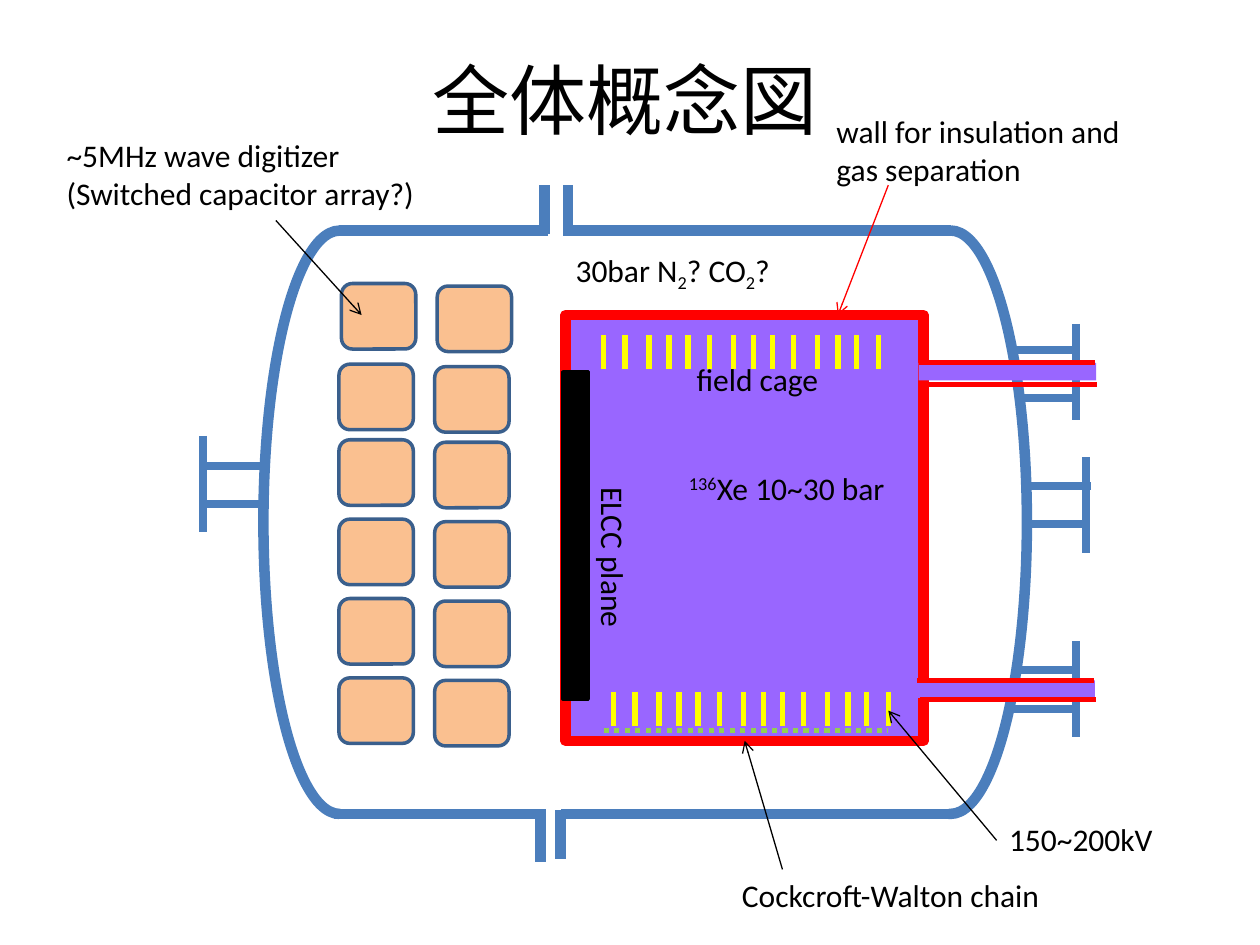
from lxml import etree
from pptx import Presentation
from pptx import util as u
from pptx.dml.color import RGBColor
from pptx.enum import dml, shapes, text
from pptx.oxml import ns

COLORS = {
    "steel": "4B7EBC", "gas": "9966FF", "wall": "FF0000", "black": "000000",
    "board": "FAC090", "board_edge": "3A5F8C", "ring": "FFFF00", "chain": "92D050",
}
SHAPE = shapes.MSO_SHAPE


def color(name):
    return RGBColor.from_string(COLORS[name])


def inches(*values):
    return [u.Inches(value) for value in values]


def add_line(group, start, end, name, width, arrow=False, dash=None):
    line = group.add_connector(shapes.MSO_CONNECTOR.STRAIGHT, *inches(*start, *end))
    line.line.color.rgb = color(name)
    line.line.width = u.Pt(width)
    if dash:
        line.line.dash_style = dash
    if arrow:
        etree.SubElement(line.line._get_or_add_ln(), ns.qn("a:tailEnd"), type="arrow")
    etree.SubElement(line._element.spPr, ns.qn("a:effectLst"))
    return line


def add_block(group, kind, frame, fill=None, edge=None, width=2):
    block = group.add_shape(kind, *inches(*frame))
    block.shadow.inherit = False
    if fill:
        block.fill.solid()
        block.fill.fore_color.rgb = color(fill)
    else:
        block.fill.background()
    if edge:
        block.line.color.rgb = color(edge)
        block.line.width = u.Pt(width)
    else:
        block.line.fill.background()
    return block


def add_label(page, frame, *lines, rotation=0):
    box = page.shapes.add_textbox(*inches(*frame))
    box.rotation = rotation
    box.text_frame.word_wrap = True
    box.text_frame.auto_size = text.MSO_AUTO_SIZE.SHAPE_TO_FIT_TEXT
    for index, spans in enumerate(lines):
        para = box.text_frame.paragraphs[0] if index == 0 else box.text_frame.add_paragraph()
        para.font.name = "Calibri"
        para.font.size = u.Pt(18)
        para.font.color.rgb = color("black")
        for words, baseline in spans:
            span = para.add_run()
            span.text = words
            if baseline:
                span._r.get_or_add_rPr().set("baseline", str(baseline * 1000))


def add_title(page):
    title = page.shapes.title
    title.left, title.top, title.width, title.height = inches(0.46, 0.16, 9, 1.25)
    title.text_frame.text = "全体概念図"
    title.text_frame.vertical_anchor = text.MSO_ANCHOR.MIDDLE
    para = title.text_frame.paragraphs[0]
    para.alignment = text.PP_ALIGN.CENTER
    para.font.name = "Calibri"
    para.font.size = u.Pt(44)
    para.font.color.rgb = color("black")


def add_boards(page):
    for left, top in ((3.45, 2.27), (2.69, 2.25)):
        for row, drop in enumerate((0, 0.64, 1.24, 1.87, 2.5, 3.13)):
            shift = 0.02 if row == 0 else 0
            add_block(page.shapes, SHAPE.ROUNDED_RECTANGLE,
                      (left + shift, top + drop, 0.59, 0.52), "board", "board_edge")


def add_field_rings(page, left, top):
    steps = [0.67 * cycle + step for cycle in range(4) for step in (0, 0.16, 0.31, 0.48)]
    for step in steps[2:]:
        x = left + step - steps[2]
        add_line(page.shapes, (x, top), (x, top + 0.27), "ring", 3)


def add_tank_half(page, arc_left, rotation, lines):
    half = page.shapes.add_group_shape().shapes
    arc = add_block(half, SHAPE.ARC, (arc_left, 1.83, 1.21, 4.63), edge="steel", width=6)
    arc.adjustments[0] = 162
    arc.adjustments[1] = 54.25
    arc.rotation = rotation
    for start, end in lines:
        add_line(half, start, end, "steel", 6)


def add_nozzle(page, flange_x, flange_top, pipes):
    for start, end, y in pipes:
        add_line(page.shapes, (start, y), (end, y), "steel", 4.5)
    add_line(page.shapes, (flange_x, flange_top), (flange_x, flange_top + 0.76), "steel", 4.5)


def add_gas_pipe(page, left, top, gap):
    add_block(page.shapes, SHAPE.RECTANGLE, (left, top, 1.41, 0.14), "gas")
    for shift, y in ((0, top), (0.02, top + gap)):
        add_line(page.shapes, (left + shift, y), (left + shift + 1.4, y), "wall", 3)


def main():
    deck = Presentation()
    deck.slide_width, deck.slide_height = inches(10, 7.5)
    page = deck.slides.add_slide(deck.slide_layouts[5])
    add_title(page)

    chamber = add_block(page.shapes, SHAPE.RECTANGLE, (4.49, 2.5, 2.84, 3.38), "gas", "wall", 6)
    add_block(page.shapes, SHAPE.RECTANGLE, (4.47, 2.95, 0.2, 2.6), "black", "black")
    add_boards(page)
    add_field_rings(page, 4.87, 5.49)
    add_field_rings(page, 4.79, 2.66)
    add_label(page, (5.37, 3.67, 2.03, 0.43), [("136", 30), ("Xe 10~30 bar", 0)])

    add_tank_half(page, 2.09, 180, (
        ((2.69, 1.83), (4.35, 1.83)), ((2.65, 6.46), (4.33, 6.46)),
        ((4.32, 1.86), (4.32, 1.47)), ((4.29, 6.84), (4.29, 6.45))))
    add_tank_half(page, 6.94, 0, (
        ((7.56, 6.46), (4.45, 6.46)), ((7.55, 1.83), (4.47, 1.83)),
        ((4.45, 6.43), (4.45, 6.82)), ((4.51, 1.47), (4.51, 1.86))))
    add_label(page, (4.47, 1.94, 2.57, 0.4),
              [("30bar N", 0), ("2", -25), ("? CO", 0), ("2", -25), ("?", 0)])

    add_nozzle(page, 1.61, 3.46, ((2.11, 1.61, 3.7), (2.11, 1.61, 4)))
    add_nozzle(page, 8.54, 2.57, ((8.53, 8.07, 2.78), (8.57, 8.07, 3.16)))
    add_nozzle(page, 8.54, 5.09, ((8.53, 8.07, 5.32), (8.53, 8.02, 5.63)))
    add_nozzle(page, 8.62, 3.63, ((8.66, 8.16, 3.86), (8.65, 8.15, 4.16)))

    add_line(page.shapes, (4.79, 5.8), (7.05, 5.8), "chain", 3,
             dash=dml.MSO_LINE.ROUND_DOT)
    add_label(page, (0.43, 1.03, 3.23, 0.67),
              [("~5MHz wave digitizer", 0)], [("(Switched capacitor array?)", 0)])
    add_label(page, (4.08, 4.36, 1.58, 0.4), [("ELCC plane", 0)], rotation=90)
    add_label(page, (5.79, 6.9, 3.08, 0.36), [("Cockcroft-Walton chain", 0)])
    add_label(page, (7.91, 6.46, 1.65, 0.4), [("150~200kV", 0)])
    add_label(page, (5.43, 2.81, 1.35, 0.33), [("field cage", 0)])
    add_label(page, (6.54, 0.84, 2.52, 0.71), [("wall for insulation and gas separation", 0)])

    add_line(page.shapes, (2.19, 1.75), (2.87, 2.5), "black", 0.75, arrow=True)
    chain_arrow = add_line(page.shapes, (6.21, 6.9), (5.91, 5.88), "black", 0.75, arrow=True)
    chain_arrow.end_connect(chamber, 2)
    add_line(page.shapes, (7.91, 6.67), (7.05, 5.64), "black", 0.75, arrow=True)
    add_line(page.shapes, (7.05, 1.47), (6.65, 2.5), "wall", 0.75, arrow=True)

    add_gas_pipe(page, 7.28, 5.4, 0.15)
    add_gas_pipe(page, 7.29, 2.88, 0.17)
    deck.save("out.pptx")


if __name__ == "__main__":
    main()
